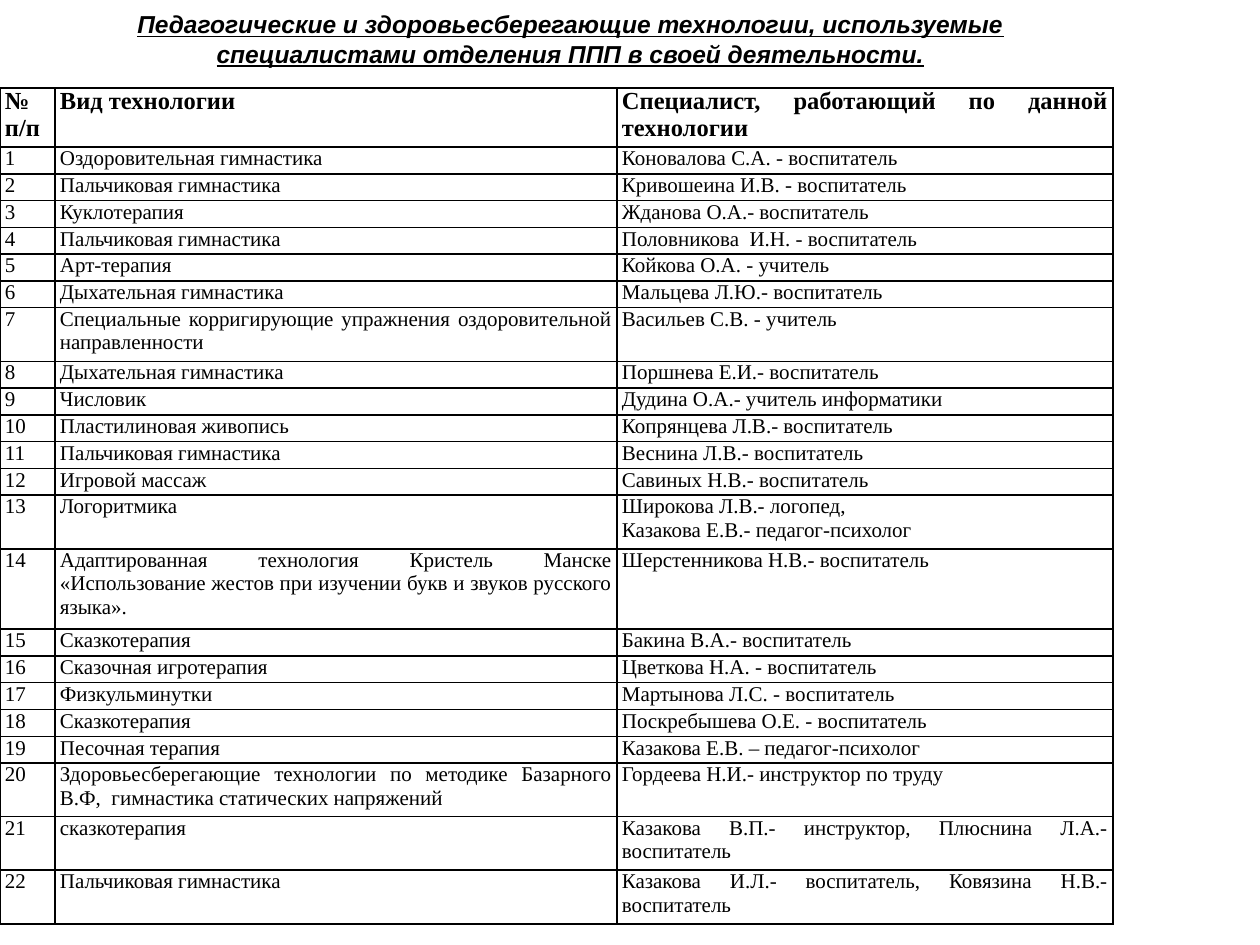
import pptx
import pptx.util
import pptx.dml.color
import pptx.enum.text
import pptx.oxml
import pptx.oxml.ns

# Content
TITLE = ("Педагогические и здоровьесберегающие технологии, используемые "
         "специалистами отделения ППП в своей деятельности.")
HEADER = ("№ п/п", "Вид технологии", "Специалист, работающий по данной технологии")
# Technology, specialist, lines of height
ROWS = [
    ("Оздоровительная гимнастика", "Коновалова С.А. - воспитатель", 1),
    ("Пальчиковая гимнастика", "Кривошеина И.В. - воспитатель", 1),
    ("Куклотерапия", "Жданова О.А.- воспитатель", 1),
    ("Пальчиковая гимнастика", "Половникова  И.Н. - воспитатель", 1),
    ("Арт-терапия", "Койкова О.А. - учитель", 1),
    ("Дыхательная гимнастика", "Мальцева Л.Ю.- воспитатель", 1),
    ("Специальные корригирующие упражнения оздоровительной направленности",
     "Васильев С.В. - учитель", 2),
    ("Дыхательная гимнастика", "Поршнева Е.И.- воспитатель", 1),
    ("Числовик", "Дудина О.А.- учитель информатики", 1),
    ("Пластилиновая живопись", "Копрянцева Л.В.- воспитатель", 1),
    ("Пальчиковая гимнастика", "Веснина Л.В.- воспитатель", 1),
    ("Игровой массаж", "Савиных Н.В.- воспитатель", 1),
    ("Логоритмика", "Широкова Л.В.- логопед,\nКазакова Е.В.- педагог-психолог", 2),
    ("Адаптированная технология Кристель Манске «Использование жестов "
     "при изучении букв и звуков русского языка».",
     "Шерстенникова Н.В.- воспитатель", 3),
    ("Сказкотерапия", "Бакина В.А.- воспитатель", 1),
    ("Сказочная игротерапия", "Цветкова Н.А. - воспитатель", 1),
    ("Физкульминутки", "Мартынова Л.С. - воспитатель", 1),
    ("Сказкотерапия", "Поскребышева О.Е. - воспитатель", 1),
    ("Песочная терапия", "Казакова Е.В. – педагог-психолог", 1),
    ("Здоровьесберегающие технологии по методике Базарного В.Ф,  "
     "гимнастика статических напряжений", "Гордеева Н.И.- инструктор по труду", 2),
    ("сказкотерапия", "Казакова В.П.- инструктор, Плюснина Л.А.-воспитатель", 2),
    ("Пальчиковая гимнастика", "Казакова И.Л.- воспитатель, Ковязина Н.В.- воспитатель", 2),
]

# Layout in px
COLORS = {"ink": "000000"}
COL_WIDTHS = (55, 562, 496)
TABLE_TOP, HEADER_HEIGHT, BODY_HEIGHT = 88, 59, 777
CELL_MARGIN = 5


def px(n):
    return pptx.util.Emu(round(n * 914400 / 126))


def style(p, font, size, align, **flags):
    p.alignment = align
    for r in p.runs:
        r.font.name, r.font.size = font, pptx.util.Pt(size)
        r.font.color.rgb = pptx.dml.color.RGBColor.from_string(COLORS["ink"])
        for name, value in flags.items():
            setattr(r.font, name, value)


def add_borders(cell):
    tcPr = cell._tc.get_or_add_tcPr()
    for i, side in enumerate(("lnL", "lnR", "lnT", "lnB")):
        tcPr.insert(i, pptx.oxml.parse_xml(
            f'<a:{side} {pptx.oxml.ns.nsdecls("a")} w="12700"><a:solidFill>'
            f'<a:srgbClr val="{COLORS["ink"]}"/></a:solidFill></a:{side}>'))


def fill_cell(cell, text, size, bold):
    cell.text = text
    cell.margin_left = cell.margin_right = px(CELL_MARGIN)
    cell.margin_top = cell.margin_bottom = 0
    cell.fill.background()
    add_borders(cell)
    for p in cell.text_frame.paragraphs:
        style(p, "Times New Roman", size, pptx.enum.text.PP_ALIGN.JUSTIFY, bold=bold)


def main():
    prs = pptx.Presentation()
    prs.slide_width, prs.slide_height = px(1260), px(945)
    s = prs.slides.add_slide(prs.slide_layouts[5])

    # Title
    title = s.shapes.title
    title.left, title.top, title.width, title.height = px(88), px(3), px(965), px(111)
    tf = title.text_frame
    tf.text = TITLE
    tf.word_wrap = True
    tf.auto_size = pptx.enum.text.MSO_AUTO_SIZE.NONE
    tf.vertical_anchor = pptx.enum.text.MSO_ANCHOR.TOP
    style(tf.paragraphs[0], "Arial", 14, pptx.enum.text.PP_ALIGN.CENTER,
          bold=True, italic=True, underline=True)

    # Table: body height is shared out by lines
    table = s.shapes.add_table(len(ROWS) + 1, len(COL_WIDTHS), 0, px(TABLE_TOP),
                               px(sum(COL_WIDTHS)), px(HEADER_HEIGHT + BODY_HEIGHT)).table
    table.first_row = table.horz_banding = False
    for column, width in zip(table.columns, COL_WIDTHS):
        column.width = px(width)
    line_height = BODY_HEIGHT / sum(lines for *_, lines in ROWS)
    heights = [HEADER_HEIGHT] + [lines * line_height for *_, lines in ROWS]
    texts = [HEADER] + [(str(n), kind, who) for n, (kind, who, _) in enumerate(ROWS, 1)]
    for i, (row, height, values) in enumerate(zip(table.rows, heights, texts)):
        row.height = px(height)
        for cell, text in zip(row.cells, values):
            fill_cell(cell, text, 12 if i else 14, i == 0)

    prs.save("out.pptx")


if __name__ == "__main__":
    main()
